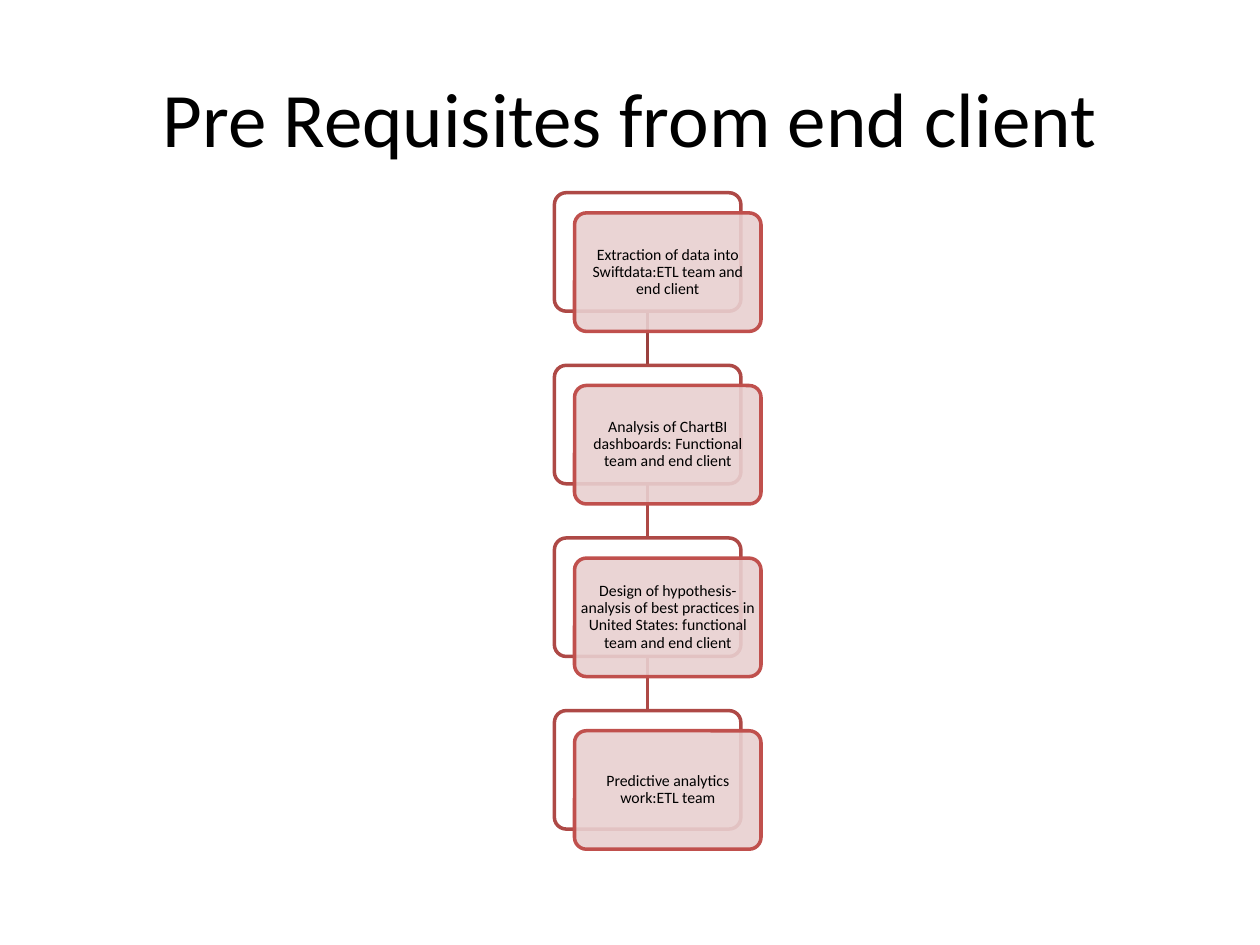
from dataclasses import dataclass

from lxml.etree import SubElement
from pptx import Presentation
from pptx.dml.color import RGBColor
from pptx.enum.shapes import MSO_CONNECTOR, MSO_SHAPE
from pptx.enum.text import MSO_ANCHOR, PP_ALIGN
from pptx.oxml.ns import qn
from pptx.shapes.autoshape import Shape
from pptx.slide import Slide
from pptx.text.text import TextFrame
from pptx.util import Inches, Pt

FONT = "Calibri"
BLACK, WHITE = "000000", "FFFFFF"
BACK_LINE, FIRST_LINK_LINE = "AE4946", "9A403E"
CARD_FILL, CARD_LINE = "E8D0D0", "C0504D"
LINE_WIDTH = Pt(2)

CARD_WIDTH, CARD_HEIGHT = 1.48, 0.94
CARD_LEFT, FIRST_TOP = 4.4, 1.53
CARD_PITCH = 1.37
FRONT_OFFSET = 0.16
# The rounded corners already inset the text by about 0.03 inches.
CARD_MARGIN = 0.01


@dataclass
class Step:
    text: str
    top: float


TEXTS = [
    "Extraction of data into Swiftdata:ETL team and end client",
    "Analysis of ChartBI dashboards: Functional team and end client",
    "Design of hypothesis-analysis of best practices in United States: "
    "functional team and end client",
    "Predictive analytics work:ETL team",
]
STEPS = [Step(text, FIRST_TOP + index * CARD_PITCH) for index, text in enumerate(TEXTS)]


def color(value: str) -> RGBColor:
    return RGBColor.from_string(value)


def write_text(frame: TextFrame, text: str, size: float) -> None:
    """Fill the frame with one centred paragraph."""
    frame.word_wrap = True
    frame.vertical_anchor = MSO_ANCHOR.MIDDLE
    frame.text = text
    para = frame.paragraphs[0]
    para.alignment = PP_ALIGN.CENTER
    font = para.runs[0].font
    font.name = FONT
    font.size = Pt(size)
    font.color.rgb = color(BLACK)


def add_title(page: Slide, text: str) -> None:
    box = page.shapes.add_textbox(Inches(0.5), Inches(0.3), Inches(9), Inches(1.25))
    write_text(box.text_frame, text, 44)


def add_link(page: Slide, upper: Step, lower: Step, line: str) -> None:
    """Join the back cards of two steps with a vertical line."""
    center = Inches(CARD_LEFT + CARD_WIDTH / 2)
    link = page.shapes.add_connector(
        MSO_CONNECTOR.STRAIGHT,
        center, Inches(upper.top + CARD_HEIGHT),
        center, Inches(lower.top),
    )
    link.line.color.rgb = color(line)
    link.line.width = LINE_WIDTH
    SubElement(link._element.spPr, qn("a:effectLst"))


def add_card(page: Slide, left: float, top: float, fill: str, line: str) -> Shape:
    card = page.shapes.add_shape(
        MSO_SHAPE.ROUNDED_RECTANGLE,
        Inches(left), Inches(top), Inches(CARD_WIDTH), Inches(CARD_HEIGHT),
    )
    card.adjustments[0] = 0.1
    card.shadow.inherit = False
    card.fill.solid()
    card.fill.fore_color.rgb = color(fill)
    card.line.color.rgb = color(line)
    card.line.width = LINE_WIDTH
    return card


def set_opacity(shape: Shape, percent: int) -> None:
    fill_color = shape._element.spPr.find(qn("a:solidFill"))[0]
    SubElement(fill_color, qn("a:alpha")).set("val", str(percent * 1000))


def add_step(page: Slide, step: Step) -> None:
    add_card(page, CARD_LEFT, step.top, WHITE, BACK_LINE)
    front = add_card(
        page, CARD_LEFT + FRONT_OFFSET, step.top + FRONT_OFFSET, CARD_FILL, CARD_LINE
    )
    set_opacity(front, 90)
    frame = front.text_frame
    frame.margin_left = frame.margin_right = Inches(CARD_MARGIN)
    frame.margin_top = frame.margin_bottom = Inches(CARD_MARGIN)
    write_text(frame, step.text, 9)
    frame.paragraphs[0].line_spacing = 0.9


def main() -> None:
    deck = Presentation()
    deck.slide_width, deck.slide_height = Inches(10), Inches(7.5)
    page = deck.slides.add_slide(deck.slide_layouts[6])
    add_title(page, "Pre Requisites from end client")
    for index, (upper, lower) in enumerate(zip(STEPS, STEPS[1:])):
        add_link(page, upper, lower, BACK_LINE if index else FIRST_LINK_LINE)
    for step in STEPS:
        add_step(page, step)
    deck.save("out.pptx")


if __name__ == "__main__":
    main()
